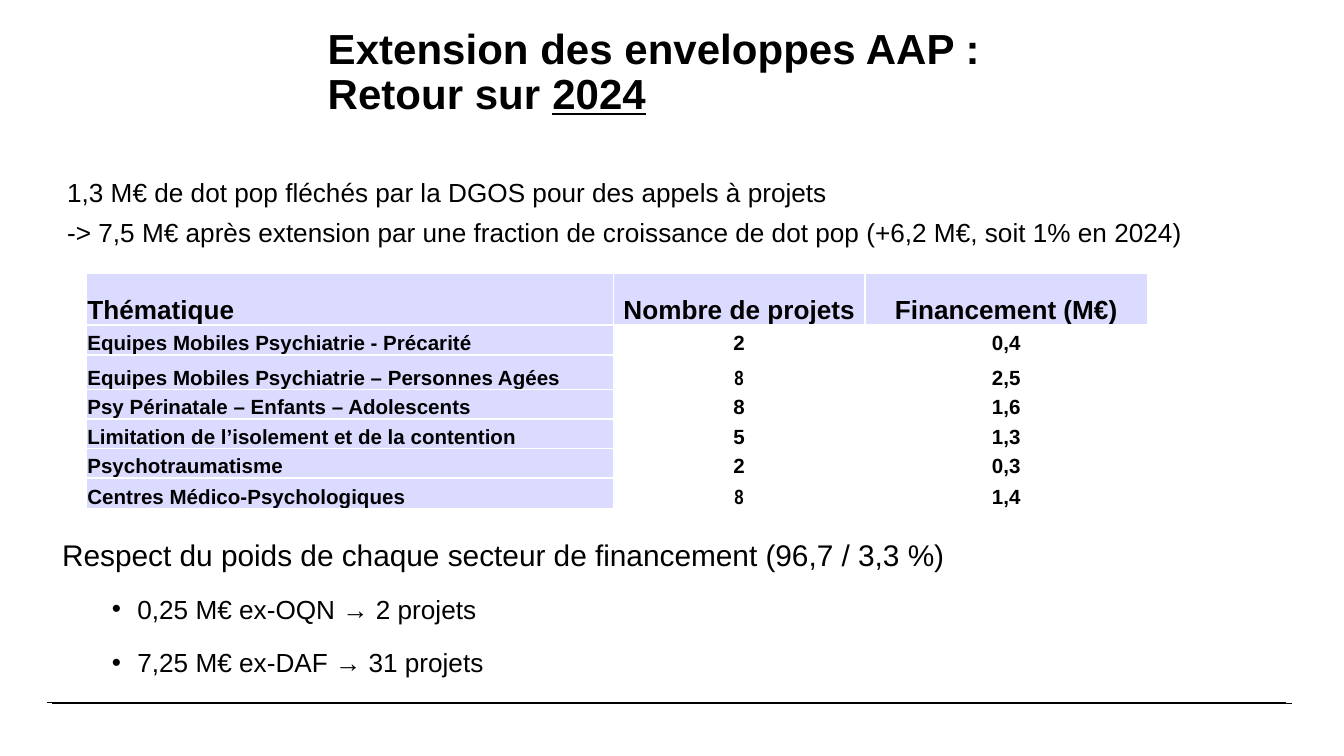
from lxml.etree import SubElement
from pptx import Presentation
from pptx.dml.color import RGBColor
from pptx.enum.shapes import MSO_CONNECTOR
from pptx.enum.text import MSO_ANCHOR, PP_ALIGN
from pptx.oxml.ns import qn
from pptx.util import Inches, Pt

THEME = {
    "font": "Arial",
    "narrow": "Arial Narrow",
    "ink": RGBColor.from_string("000000"),
    "lavender": RGBColor.from_string("DBDBFF"),
    "border": "FFFFFF",
    "title": Pt(22.5),
    "lead": Pt(16),
    "body": Pt(14),
    "cell": Pt(11),
    "rule": Pt(0.8),
}
GRID = {"columns": 100, "rows": 56.25}

TITLE = {
    "place": (23.2, 2.5, 70.1, 5.9),
    "lines": ["Extension des enveloppes AAP :", "Retour sur "],
    "year": "2024",
}
INTRODUCTION = {
    "place": (5, 13.1, 90, 37.1),
    "paragraphs": [
        ("1,3 M€ de dot pop fléchés par la DGOS pour des appels à projets", "plain"),
        ("-> 7,5 M€ après extension par une fraction de croissance de dot pop "
         "(+6,2 M€, soit 1% en 2024)", "plain"),
    ],
}
CONCLUSION = {
    "place": (4.63, 39.93, 90, 12.2),
    "paragraphs": [
        ("Respect du poids de chaque secteur de financement (96,7 / 3,3 %)", "lead"),
        ("0,25 M€ ex-OQN → 2 projets", "bullet"),
        ("7,25 M€ ex-DAF → 31 projets", "bullet"),
    ],
}
STYLES = {
    "plain": {"size": "body", "margin": 1.9, "bullet": None,
              "format": {"space_after": Pt(5)}},
    "lead": {"size": "lead", "margin": 1.9, "bullet": None,
             "format": {"space_after": Pt(5)}},
    "bullet": {"size": "body", "margin": 5.6, "bullet": "•",
               "format": {"level": 1, "space_before": Pt(6), "space_after": Pt(6)}},
}
HANGING = 1.9

TABLE_ORIGIN = (6.4, 20.3)
COLUMN_WIDTHS = (39.25, 18.7, 21.05)
ROW_HEIGHTS = (3.9, 2.2, 2.6, 2.2, 2.2, 2.2, 2.3)
TABLE_ROWS = [
    ("Thématique", "Nombre de projets", "Financement (M€)"),
    ("Equipes Mobiles Psychiatrie - Précarité", "2", "0,4"),
    ("Equipes Mobiles Psychiatrie – Personnes Agées", "8", "2,5"),
    ("Psy Périnatale – Enfants – Adolescents", "8", "1,6"),
    ("Limitation de l’isolement et de la contention", "5", "1,3"),
    ("Psychotraumatisme", "2", "0,3"),
    ("Centres Médico-Psychologiques", "8", "1,4"),
]
NARROW_CELLS = {(2, 1), (6, 1)}
FOOTER_RULES = [(3.5, 95.7, 52.27), (3.9, 96.1, 52.34)]

presentation = Presentation()
presentation.slide_width = Inches(10)
presentation.slide_height = presentation.slide_width * 9 // 16
slide = presentation.slides.add_slide(presentation.slide_layouts[6])


def across(columns):
    return round(presentation.slide_width * columns / GRID["columns"])


def down(rows):
    return round(presentation.slide_height * rows / GRID["rows"])


def apply(target, values):
    for name, value in values.items():
        setattr(target, name, value)


def style_font(font, size, bold=False, name="font"):
    apply(font, {"name": THEME[name], "size": THEME[size], "bold": bold})
    font.color.rgb = THEME["ink"]


def indent(paragraph, margin, first_line):
    properties = paragraph._p.get_or_add_pPr()
    properties.set("marL", str(across(margin)))
    properties.set("indent", str(across(first_line)))
    return properties


def add_text_box(place, **frame_format):
    left, top, width, height = place
    shape = slide.shapes.add_textbox(across(left), down(top), across(width), down(height))
    apply(shape.text_frame, {"word_wrap": True, **frame_format})
    return shape.text_frame


def add_title():
    frame = add_text_box(TITLE["place"], vertical_anchor=MSO_ANCHOR.MIDDLE)
    paragraph = frame.paragraphs[0]
    indent(paragraph, 0.2, 0)
    paragraph.line_spacing = 0.9
    paragraph.text = "\v".join(TITLE["lines"])
    paragraph.add_run().text = TITLE["year"]
    for run in paragraph.runs:
        style_font(run.font, "title", bold=True)
    paragraph.runs[-1].font.underline = True


def add_paragraphs(block):
    frame = add_text_box(block["place"], margin_left=0, margin_top=0,
                         margin_right=0, margin_bottom=0)
    for index, (text, style_name) in enumerate(block["paragraphs"]):
        style = STYLES[style_name]
        paragraph = frame.add_paragraph() if index else frame.paragraphs[0]
        apply(paragraph, style["format"])
        properties = indent(paragraph, style["margin"], -HANGING)
        if style["bullet"]:
            SubElement(properties, qn("a:buFont"), typeface=THEME["font"])
            SubElement(properties, qn("a:buChar"), char=style["bullet"])
        else:
            SubElement(properties, qn("a:buNone"))
        run = paragraph.add_run()
        run.text = text
        style_font(run.font, style["size"])


def add_borders(cell):
    properties = cell._tc.get_or_add_tcPr()
    for side in ("lnL", "lnR", "lnT", "lnB"):
        line = SubElement(properties, qn(f"a:{side}"), w=str(Pt(1)))
        fill = SubElement(line, qn("a:solidFill"))
        SubElement(fill, qn("a:srgbClr"), val=THEME["border"])


def fill_cell(cell, text, row, column):
    apply(cell, {"margin_left": across(0.1), "margin_right": across(0.1),
                 "margin_top": down(0.1), "margin_bottom": 0,
                 "vertical_anchor": MSO_ANCHOR.BOTTOM})
    add_borders(cell)
    if row == 0 or column == 0:
        cell.fill.solid()
        cell.fill.fore_color.rgb = THEME["lavender"]
    else:
        cell.fill.background()
    paragraph = cell.text_frame.paragraphs[0]
    paragraph.alignment = PP_ALIGN.CENTER if column else PP_ALIGN.LEFT
    run = paragraph.add_run()
    run.text = text
    style_font(run.font, "cell" if row else "body", bold=True,
               name="narrow" if (row, column) in NARROW_CELLS else "font")


def add_projects_table():
    left, top = TABLE_ORIGIN
    table = slide.shapes.add_table(
        len(ROW_HEIGHTS), len(COLUMN_WIDTHS), across(left), down(top),
        across(sum(COLUMN_WIDTHS)), down(sum(ROW_HEIGHTS))).table
    apply(table, {"first_row": False, "horz_banding": False})
    for column, width in zip(table.columns, COLUMN_WIDTHS):
        column.width = across(width)
    for row, height in zip(table.rows, ROW_HEIGHTS):
        row.height = down(height)
    for row, texts in enumerate(TABLE_ROWS):
        for column, text in enumerate(texts):
            fill_cell(table.cell(row, column), text, row, column)


def add_footer_rules():
    for start, end, level in FOOTER_RULES:
        rule = slide.shapes.add_connector(
            MSO_CONNECTOR.STRAIGHT, across(start), down(level),
            across(end), down(level))
        rule.line.color.rgb = THEME["ink"]
        rule.line.width = THEME["rule"]
        SubElement(rule._element.spPr, qn("a:effectLst"))


add_footer_rules()
add_title()
add_paragraphs(INTRODUCTION)
add_projects_table()
add_paragraphs(CONCLUSION)
presentation.save("out.pptx")
